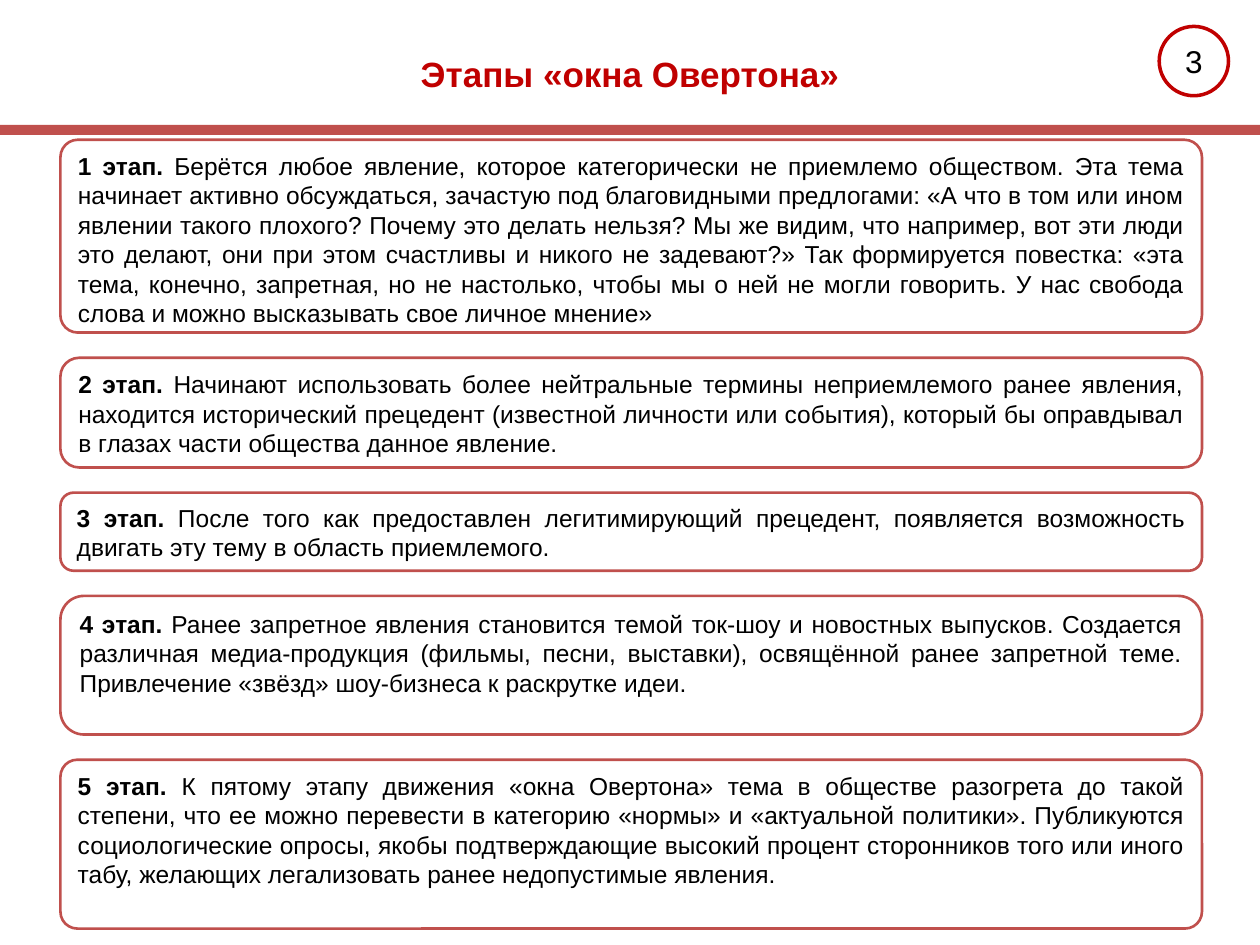
from pptx import Presentation
from pptx.dml.color import RGBColor
from pptx.enum.shapes import MSO_SHAPE
from pptx.enum.text import MSO_ANCHOR, MSO_AUTO_SIZE, PP_ALIGN
from pptx.util import Inches, Pt

BRICK = RGBColor(0xC0, 0x50, 0x4D)
CRIMSON = RGBColor(0xC0, 0x00, 0x00)
BLACK = RGBColor(0x00, 0x00, 0x00)

STAGES = [
    (1.53, 0.09, "Берётся любое явление, которое категорически не приемлемо обществом. "
     "Эта тема начинает активно обсуждаться, зачастую под благовидными предлогами: "
     "«А что в том или ином явлении такого плохого? Почему это делать нельзя? "
     "Мы же видим, что например, вот эти люди это делают, они при этом счастливы "
     "и никого не задевают?» Так формируется повестка: «эта тема, конечно, запретная, "
     "но не настолько, чтобы мы о ней не могли говорить. У нас свобода слова "
     "и можно высказывать свое личное мнение»"),
    (0.87, 0.17, "Начинают использовать более нейтральные термины неприемлемого ранее "
     "явления, находится исторический прецедент (известной личности или события), "
     "который бы оправдывал в глазах части общества данное явление."),
    (0.62, 0.17, "После того как предоставлен легитимирующий прецедент, появляется "
     "возможность двигать эту тему в область приемлемого."),
    (1.1, 0.17, "Ранее запретное явления становится темой ток-шоу и новостных выпусков. "
     "Создается различная медиа-продукция (фильмы, песни, выставки), освящённой ранее "
     "запретной теме. Привлечение «звёзд» шоу-бизнеса к раскрутке идеи."),
    (1.34, 0.1, "К пятому этапу движения «окна Овертона» тема в обществе разогрета "
     "до такой степени, что ее можно перевести в категорию «нормы» и «актуальной "
     "политики». Публикуются социологические опросы, якобы подтверждающие высокий "
     "процент сторонников того или иного табу, желающих легализовать ранее "
     "недопустимые явления."),
]
STAGE_GAP = 0.2


def write(shape, text, lead="", size=14, color=BLACK, bold=False,
          align=PP_ALIGN.CENTER, anchor=MSO_ANCHOR.MIDDLE):
    frame = shape.text_frame
    frame.word_wrap = True
    frame.auto_size = MSO_AUTO_SIZE.NONE
    frame.vertical_anchor = anchor
    paragraph = frame.paragraphs[0]
    paragraph.alignment = align
    for part, is_bold in ((lead, True), (text, bold)):
        if part:
            run = paragraph.add_run()
            run.text = part
            run.font.name = "Arial"
            run.font.size = Pt(size)
            run.font.bold = is_bold
            run.font.color.rgb = color


def add_box(kind, left, top, width, height, fill=None, line=None, weight=1.5):
    box = slide.shapes.add_shape(
        kind, Inches(left), Inches(top), Inches(width), Inches(height))
    box.shadow.inherit = False
    if fill is None:
        box.fill.background()
    else:
        box.fill.solid()
        box.fill.fore_color.rgb = fill
    if line is None:
        box.line.fill.background()
    else:
        box.line.color.rgb = line
        box.line.width = Pt(weight)
    return box


prs = Presentation()
prs.slide_width = Inches(10)
prs.slide_height = Inches(7.5)
slide = prs.slides.add_slide(prs.slide_layouts[5])

heading = slide.shapes.title
heading.left, heading.top = Inches(0), Inches(0.17)
heading.width, heading.height = Inches(10), Inches(0.82)
write(heading, "Этапы «окна Овертона»", size=20, color=CRIMSON, bold=True)

add_box(MSO_SHAPE.RECTANGLE, 0, 0.99, 10, 0.08, fill=BRICK)
page_number = add_box(MSO_SHAPE.OVAL, 9.2, 0.21, 0.55, 0.55, line=CRIMSON, weight=2)
write(page_number, "3", size=18)

top = 1.11
for number, (height, rounding, description) in enumerate(STAGES, start=1):
    stage = add_box(MSO_SHAPE.ROUNDED_RECTANGLE, 0.48, top, 9.06, height, line=BRICK)
    stage.adjustments[0] = rounding
    write(stage, description, lead=f"{number} этап. ",
          align=PP_ALIGN.JUSTIFY, anchor=MSO_ANCHOR.TOP)
    top += height + STAGE_GAP

prs.save("out.pptx")
